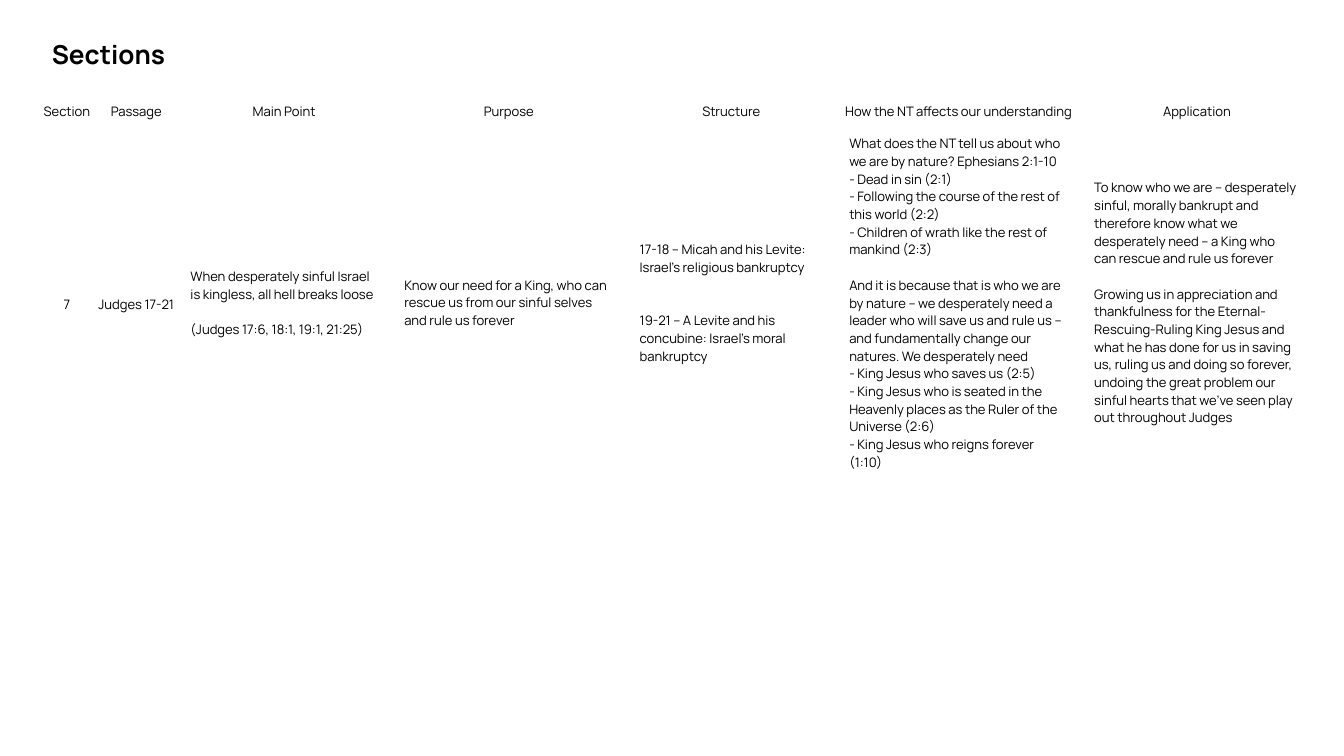
"""Build the Sections slide: a title above a table of Judges 17-21."""

import dataclasses
import typing

import pptx
import pptx.dml.color
import pptx.enum.text
import pptx.util

Cm = pptx.util.Cm
Pt = pptx.util.Pt
Align = pptx.enum.text.PP_ALIGN


@dataclasses.dataclass(frozen=True)
class Theme:
    font: str = "Manrope"
    ink: pptx.dml.color.RGBColor = pptx.dml.color.RGBColor(0, 0, 0)
    title_size: float = 14
    table_size: float = 7
    blank_line: float = 9.56


class Line(typing.NamedTuple):
    text: str
    blank_lines_before: int = 0


@dataclasses.dataclass(frozen=True)
class Column:
    heading: str
    width: float
    body: tuple[Line, ...]
    is_label: bool = False


THEME = Theme()
HEADER_HEIGHT, BODY_HEIGHT = Cm(0.64), Cm(6.65)
LABEL_FORMAT = {
    "margin_left": Cm(0.03),
    "margin_right": Cm(0.03),
    "margin_top": Cm(0),
    "margin_bottom": Cm(0),
}
BODY_FORMAT = {
    "margin_left": Cm(0.25),
    "margin_right": Cm(0.25),
    "margin_top": Cm(0.13),
    "margin_bottom": Cm(0.13),
}
COLUMNS = (
    Column("Section", 1.07, (Line("7"),), True),
    Column("Passage", 1.55, (Line("Judges 17-21"),), True),
    Column("Main Point", 4.04, (
        Line("When desperately sinful Israel is kingless, all hell breaks loose"),
        Line("(Judges 17:6, 18:1, 19:1, 21:25)", 1),
    )),
    Column("Purpose", 4.45, (
        Line("Know our need for a King, who can rescue us from our sinful selves and rule us forever"),
    )),
    Column("Structure", 3.96, (
        Line("17-18 – Micah and his Levite: Israel’s religious bankruptcy"),
        Line("19-21 – A Levite and his concubine: Israel’s moral bankruptcy", 2),
    )),
    Column("How the NT affects our understanding", 4.63, (
        Line("What does the NT tell us about who we are by nature? Ephesians 2:1-10"),
        Line("- Dead in sin (2:1)"),
        Line("- Following the course of the rest of this world (2:2)"),
        Line("- Children of wrath like the rest of mankind (2:3)"),
        Line("And it is because that is who we are by nature – we desperately need a leader who will "
             "save us and rule us – and fundamentally change our natures. We desperately need", 1),
        Line("- King Jesus who saves us (2:5)"),
        Line("- King Jesus who is seated in the Heavenly places as the Ruler of the Universe (2:6)"),
        Line("- King Jesus who reigns forever (1:10)"),
    )),
    Column("Application", 4.38, (
        Line("To know who we are – desperately sinful, morally bankrupt and therefore know what "
             "we desperately need – a King who can rescue and rule us forever"),
        Line("Growing us in appreciation and thankfulness for the Eternal-Rescuing-Ruling King Jesus "
             "and what he has done for us in saving us, ruling us and doing so forever, undoing the "
             "great problem our sinful hearts that we’ve seen play out throughout Judges", 1),
    )),
)


def apply_format(target: typing.Any, values: dict[str, typing.Any]) -> None:
    """Set each named attribute on the target."""
    for name, value in values.items():
        setattr(target, name, value)


def write_lines(text_frame: typing.Any, lines: tuple[Line, ...], size: float,
                bold: bool = False, **paragraph_format: typing.Any) -> None:
    """Write one paragraph per line in the theme font."""
    for index, line in enumerate(lines):
        paragraph = text_frame.add_paragraph() if index else text_frame.paragraphs[0]
        spacing = {"space_before": Pt(line.blank_lines_before * THEME.blank_line)}
        apply_format(paragraph, spacing | paragraph_format)
        run = paragraph.add_run()
        run.text = line.text
        apply_format(run.font, {"name": THEME.font, "size": Pt(size), "bold": bold})
        run.font.color.rgb = THEME.ink


def fill_cell(cell: typing.Any, lines: tuple[Line, ...], is_label: bool) -> None:
    """Fill a table cell as a centred label or as left-aligned body text."""
    cell.fill.background()
    cell.vertical_anchor = pptx.enum.text.MSO_ANCHOR.MIDDLE
    apply_format(cell, LABEL_FORMAT if is_label else BODY_FORMAT)
    alignment, spacing = (Align.CENTER, 1.15) if is_label else (Align.LEFT, 1.0)
    write_lines(cell.text_frame, lines, THEME.table_size, alignment=alignment, line_spacing=spacing)


def add_title(slide: typing.Any, text: str) -> None:
    """Add the slide title."""
    text_frame = slide.shapes.add_textbox(Cm(0.73), Cm(0.48), Cm(23.67), Cm(1.78)).text_frame
    margins = ("margin_left", "margin_right", "margin_top", "margin_bottom")
    apply_format(text_frame, {"word_wrap": True} | dict.fromkeys(margins, Cm(0.25)))
    write_lines(text_frame, (Line(text),), THEME.title_size, bold=True)


def add_sections_table(slide: typing.Any, columns: tuple[Column, ...]) -> None:
    """Add the table with a heading and a body cell for each column."""
    width = Cm(sum(column.width for column in columns))
    table = slide.shapes.add_table(
        2, len(columns), Cm(0.73), Cm(1.76), width, HEADER_HEIGHT + BODY_HEIGHT
    ).table
    apply_format(table, {"first_row": False, "horz_banding": False})
    for row, height in zip(table.rows, (HEADER_HEIGHT, BODY_HEIGHT)):
        row.height = height
    for index, column in enumerate(columns):
        table.columns[index].width = Cm(column.width)
        fill_cell(table.cell(0, index), (Line(column.heading),), True)
        fill_cell(table.cell(1, index), column.body, column.is_label)


def main() -> None:
    """Build and save the presentation."""
    presentation = pptx.Presentation()
    apply_format(presentation, {"slide_width": Cm(25.4), "slide_height": Cm(14.29)})
    slide = presentation.slides.add_slide(presentation.slide_layouts[6])
    add_title(slide, "Sections")
    add_sections_table(slide, COLUMNS)
    presentation.save("out.pptx")


if __name__ == "__main__":
    main()
